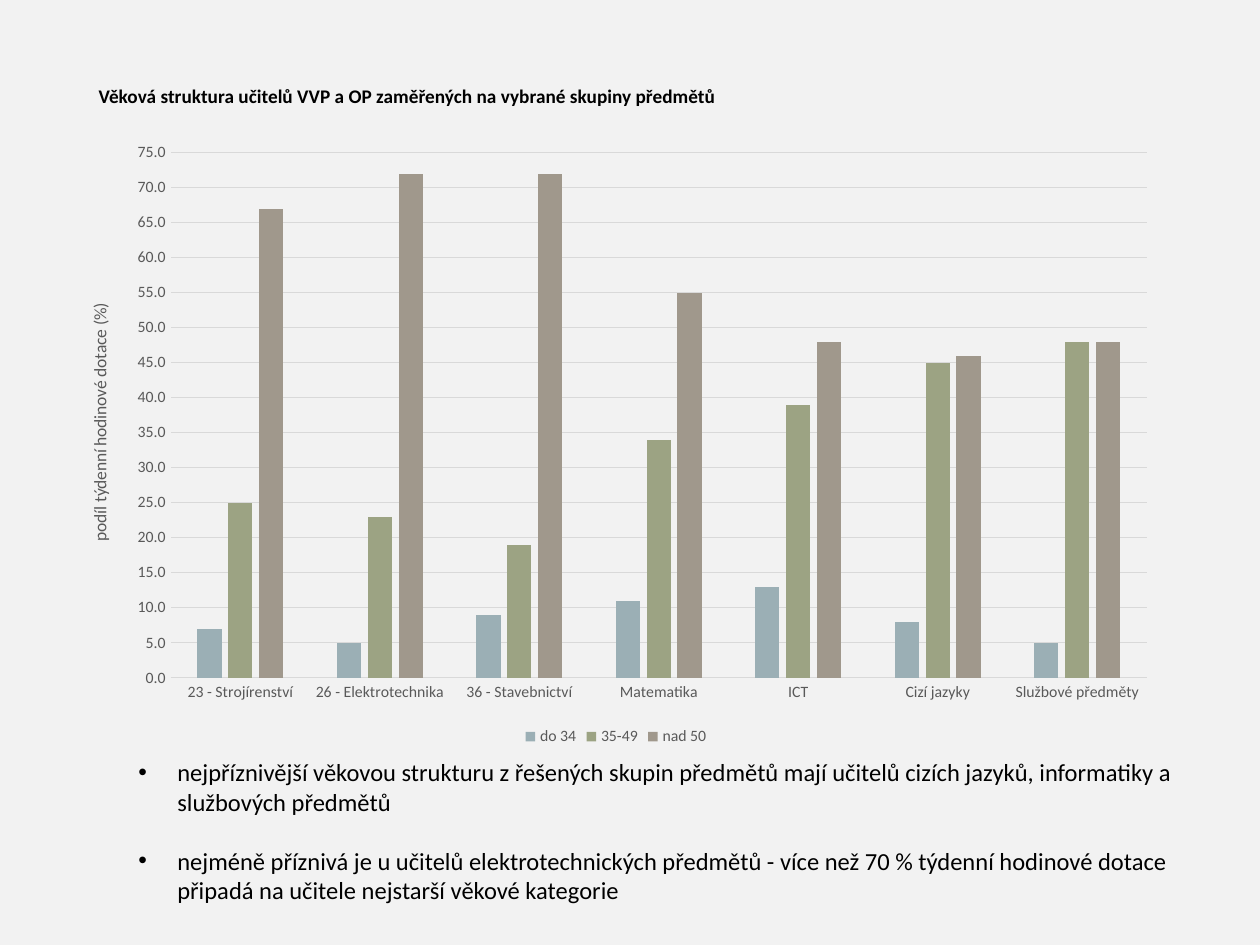
from lxml import etree
from pptx import Presentation
from pptx.chart.data import CategoryChartData
from pptx.dml.color import RGBColor
from pptx.enum.chart import XL_CHART_TYPE, XL_LEGEND_POSITION, XL_TICK_MARK
from pptx.enum.text import MSO_ANCHOR, MSO_AUTO_SIZE, PP_ALIGN
from pptx.oxml.ns import qn
from pptx.util import Emu, Pt

COLUMNS = XL_CHART_TYPE.COLUMN_CLUSTERED
BOTTOM = XL_LEGEND_POSITION.BOTTOM
NO_TICK = XL_TICK_MARK.NONE
TOP = MSO_ANCHOR.TOP
GROW = MSO_AUTO_SIZE.SHAPE_TO_FIT_TEXT
LEFT = PP_ALIGN.LEFT

FONT = "Calibri"
BLACK, GREY, RULE, PAPER = "000000", "595959", "D9D9D9", "F2F2F2"
PX_PER_INCH = 126

TITLE = "Věková struktura učitelů VVP a OP zaměřených na vybrané skupiny předmětů"
AXIS_TITLE = "podíl týdenní hodinové dotace (%)"
SUBJECTS = ["23 - Strojírenství", "26 - Elektrotechnika", "36 - Stavebnictví",
            "Matematika", "ICT", "Cizí jazyky", "Službové předměty"]
AGE_GROUPS = [
    ("do 34", "9BAFB5", [7, 5, 9, 11, 13, 8, 5]),
    ("35-49", "9CA383", [25, 23, 19, 34, 39, 45, 48]),
    ("nad 50", "A0988C", [67, 72, 72, 55, 48, 46, 48]),
]
FINDINGS = [
    "nejpříznivější věkovou strukturu z řešených skupin předmětů mají učitelů "
    "cizích jazyků, informatiky a službových předmětů",
    "nejméně příznivá je u učitelů elektrotechnických předmětů - více než 70 % "
    "týdenní hodinové dotace připadá na učitele nejstarší věkové kategorie",
]


def px(n):
    return Emu(round(n * 914400 / PX_PER_INCH))


def color(hex_string):
    return RGBColor.from_string(hex_string)


def style_font(font, size, hex_string, bold=False):
    font.name = FONT
    font.size = Pt(size)
    font.bold = bold
    font.color.rgb = color(hex_string)


def style_line(line):
    line.color.rgb = color(RULE)
    line.width = Pt(0.75)


def add_title(slide):
    sp = slide.shapes.title
    sp.left, sp.top, sp.width, sp.height = px(86), px(78), px(766), px(36)
    tf = sp.text_frame
    tf.text = TITLE
    tf.word_wrap = True
    tf.auto_size = GROW
    tf.vertical_anchor = TOP
    p = tf.paragraphs[0]
    p.alignment = LEFT
    style_font(p.runs[0].font, 11, BLACK, bold=True)


def style_axes(chart):
    cat_axis, val_axis = chart.category_axis, chart.value_axis
    for axis in (cat_axis, val_axis):
        axis.major_tick_mark = axis.minor_tick_mark = NO_TICK
        style_font(axis.tick_labels.font, 9, GREY)
    style_line(cat_axis.format.line)
    val_axis.format.line.fill.background()
    val_axis.minimum_scale, val_axis.maximum_scale = 0, 75
    val_axis.major_unit = 5
    style_line(val_axis.major_gridlines.format.line)
    val_axis.tick_labels.number_format = "0.0"
    val_axis.tick_labels.number_format_is_linked = False
    tf = val_axis.axis_title.text_frame
    tf.text = AXIS_TITLE
    style_font(tf.paragraphs[0].runs[0].font, 10, GREY)


def add_age_chart(slide):
    data = CategoryChartData(number_format="0.0")
    data.categories = SUBJECTS
    for name, _, values in AGE_GROUPS:
        data.add_series(name, values)
    chart = slide.shapes.add_chart(
        COLUMNS, px(63), px(131), px(1106), px(620), data).chart
    style_font(chart.font, 10, BLACK)
    chart.has_title = False
    chart.has_legend = True
    chart.legend.position = BOTTOM
    chart.legend.include_in_layout = False
    style_font(chart.legend.font, 9, GREY)
    style_axes(chart)
    plot = chart.plots[0]
    plot.vary_by_categories = False
    plot.gap_width, plot.overlap = 219, -27
    for series, (_, fill, _) in zip(plot.series, AGE_GROUPS):
        series.format.fill.solid()
        series.format.fill.fore_color.rgb = color(fill)


def add_bullet(p, indent):
    pPr = p._p.get_or_add_pPr()
    pPr.set("marL", str(indent))
    pPr.set("indent", str(-indent))
    etree.SubElement(pPr, qn("a:buFont")).set("typeface", "Arial")
    etree.SubElement(pPr, qn("a:buChar")).set("char", "•")


def add_findings(slide):
    sp = slide.shapes.add_textbox(px(126), px(751), px(1061), px(161))
    tf = sp.text_frame
    tf.word_wrap = True
    tf.auto_size = GROW
    for i, finding in enumerate(FINDINGS):
        p = tf.add_paragraph() if i else tf.paragraphs[0]
        p.text = finding
        p.space_before = Pt(17 if i else 0)
        add_bullet(p, px(39))
        style_font(p.runs[0].font, 14, BLACK)


def main():
    prs = Presentation()
    prs.slide_width, prs.slide_height = px(1260), px(945)
    slide = prs.slides.add_slide(prs.slide_layouts[5])
    slide.background.fill.solid()
    slide.background.fill.fore_color.rgb = color(PAPER)
    add_age_chart(slide)
    add_title(slide)
    add_findings(slide)
    prs.save("out.pptx")


if __name__ == "__main__":
    main()
